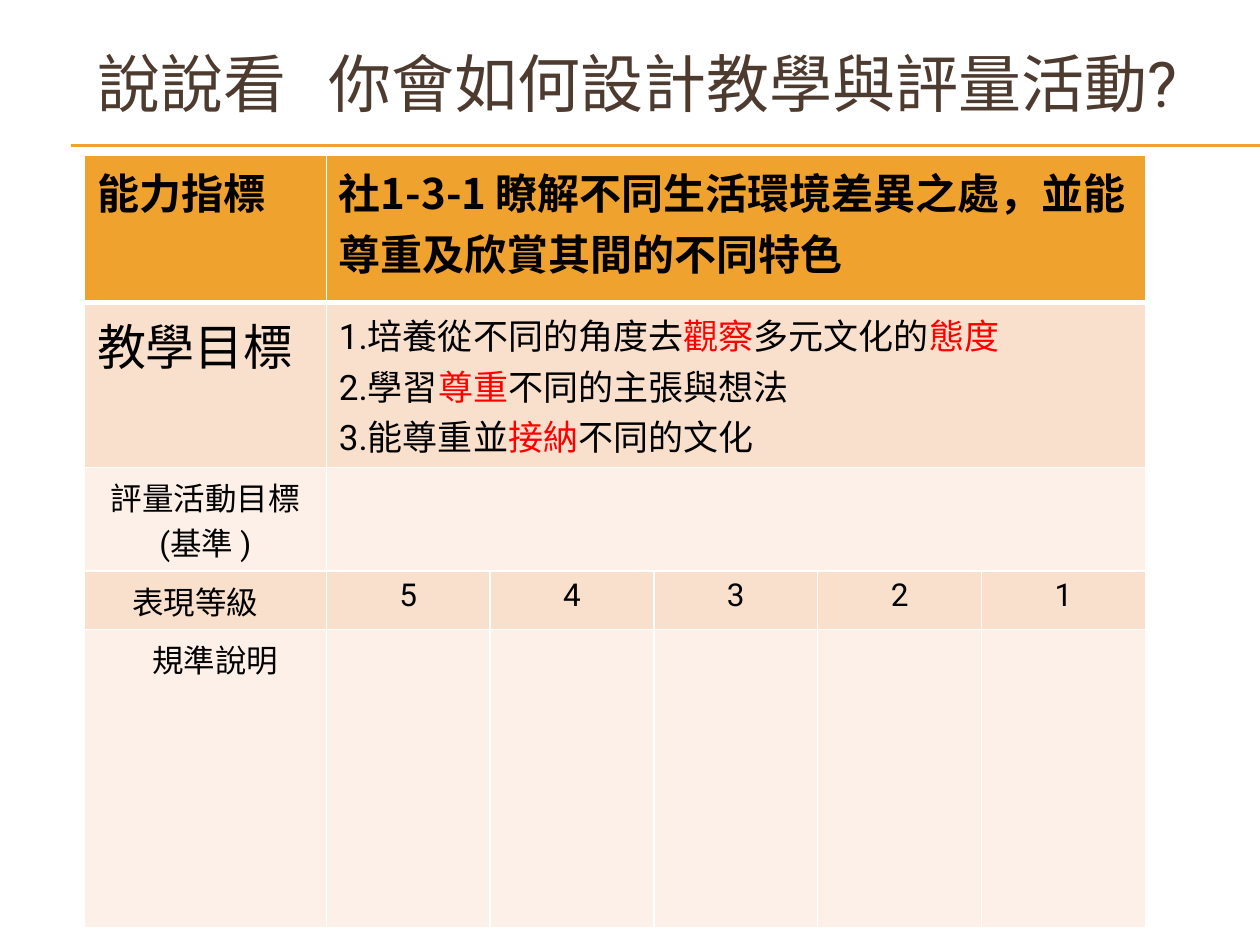
"""Build a slide with a teaching and assessment planning table."""
from lxml.etree import SubElement
from pptx import Presentation
from pptx.dml.color import RGBColor
from pptx.enum.shapes import MSO_CONNECTOR
from pptx.enum.text import MSO_ANCHOR, MSO_AUTO_SIZE, PP_ALIGN as Align
from pptx.oxml.ns import qn
from pptx.util import Inches, Pt

COLORS = {
    "accent": "F0A22E", "title": "4E3B30", "text": "000000", "key": "FF0000",
    "dark band": "F9E0CD", "light band": "FCF0E8", "border": "FFFFFF",
}
LATIN, ASIAN = "Roboto", "Noto Sans CJK SC"
COLUMNS = [1.92] + [1.3] * 5
ROWS = [1.17, 1.22, 0.78, 0.45, 2.37]
BANDS = ["accent", "dark band", "light band", "dark band", "light band"]
GOALS = [
    ["1.培養從不同的角度去", "觀察", "多元文化的", "態度"],
    ["2.學習", "尊重", "不同的主張與想法"],
    ["3.能尊重並", "接納", "不同的文化"],
]


def color(name):
    """Return the named colour."""
    return RGBColor.from_string(COLORS[name])


def style(para, size, tint="text", latin=LATIN, bold=False, align=Align.LEFT):
    """Set the font and alignment of a paragraph and return its font element."""
    para.alignment = align
    font = para.font
    font.name, font.size, font.bold = latin, Pt(size), bold
    font.color.rgb = color(tint)
    element = para._p.pPr.find(qn("a:defRPr"))
    SubElement(element, qn("a:ea")).set("typeface", ASIAN)
    return element


def add_title(slide, before, after):
    """Fill the title with two phrases parted by a tab stop."""
    title = slide.shapes.title
    title.left, title.top = Inches(0.67), Inches(0.21)
    title.width, title.height = Inches(9), Inches(0.89)
    frame = title.text_frame
    frame.text = f"{before}\t{after}"
    frame.vertical_anchor = MSO_ANCHOR.MIDDLE
    frame.auto_size = MSO_AUTO_SIZE.NONE
    para = frame.paragraphs[0]
    font = style(para, 36, "title")
    tabs = SubElement(para._p.pPr, qn("a:tabLst"))
    SubElement(tabs, qn("a:tab"), pos=str(Inches(1.84)), algn="l")
    font.addprevious(tabs)


def add_rule(slide, top):
    """Draw a thin line from the left margin to the right edge."""
    line = slide.shapes.add_connector(
        MSO_CONNECTOR.STRAIGHT, Inches(0.56), Inches(top), Inches(10), Inches(top))
    line.line.color.rgb = color("accent")
    line.line.width = Pt(0.75)
    SubElement(line._element.spPr, qn("a:effectLst"))


def set_borders(cell, bottom, top):
    """Give a cell white borders."""
    properties = cell._tc.get_or_add_tcPr()
    widths = {"lnL": 1, "lnR": 1, "lnT": top, "lnB": bottom}
    for index, (side, width) in enumerate(widths.items()):
        line = SubElement(properties, qn(f"a:{side}"), w=str(Pt(width)))
        fill = SubElement(line, qn("a:solidFill"))
        SubElement(fill, qn("a:srgbClr"), val=COLORS["border"])
        properties.insert(index, line)


def add_grid(slide):
    """Add the empty table with its sizes, fills, borders and merged cells."""
    table = slide.shapes.add_table(
        len(ROWS), len(COLUMNS), Inches(0.67), Inches(1.23),
        Inches(sum(COLUMNS)), Inches(sum(ROWS))).table
    table.first_row = table.horz_banding = False
    for column, width in zip(table.columns, COLUMNS):
        column.width = Inches(width)
    for index, (row, height) in enumerate(zip(table.rows, ROWS)):
        row.height = Inches(height)
        for cell in row.cells:
            cell.fill.solid()
            cell.fill.fore_color.rgb = color(BANDS[index])
            set_borders(cell, 3 if index == 0 else 1, 3 if index == 1 else 1)
    for index in range(3):
        table.cell(index, 1).merge(table.cell(index, len(COLUMNS) - 1))
    return table


def write(cell, text, size=18, margin=0.1, **options):
    """Write lines of uniform text into a cell."""
    cell.margin_left = Inches(margin)
    cell.text_frame.text = text
    for para in cell.text_frame.paragraphs:
        style(para, size, **options)


def write_goals(cell):
    """Write the goals, with every second span in the key colour."""
    frame = cell.text_frame
    for index, goal in enumerate(GOALS):
        para = frame.add_paragraph() if index else frame.paragraphs[0]
        style(para, 20)
        for position, text in enumerate(goal):
            span = para.add_run()
            span.text = text
            if position % 2:
                span.font.color.rgb = color("key")


def main():
    """Build and save the deck."""
    deck = Presentation()
    deck.slide_width, deck.slide_height = Inches(10), Inches(7.5)
    slide = deck.slides.add_slide(deck.slide_layouts[5])
    add_title(slide, "說說看", "你會如何設計教學與評量活動?")
    for top in (1.15, 1.16):
        add_rule(slide, top)

    table = add_grid(slide)
    heading = {"size": 24, "latin": ASIAN, "bold": True}
    write(table.cell(0, 0), "能力指標", **heading)
    write(table.cell(0, 1), "社1-3-1 瞭解不同生活環境差異之處，並能尊重及欣賞其間的不同特色", **heading)
    write(table.cell(1, 0), "教學目標", size=28)
    write_goals(table.cell(1, 1))
    write(table.cell(2, 0), "評量活動目標\n(基準 )", align=Align.CENTER)
    write(table.cell(3, 0), "表現等級", margin=0.38)
    for column in range(1, len(COLUMNS)):
        write(table.cell(3, column), str(len(COLUMNS) - column), align=Align.CENTER)
    write(table.cell(4, 0), "規準說明", margin=0.54)
    deck.save("out.pptx")


if __name__ == "__main__":
    main()
